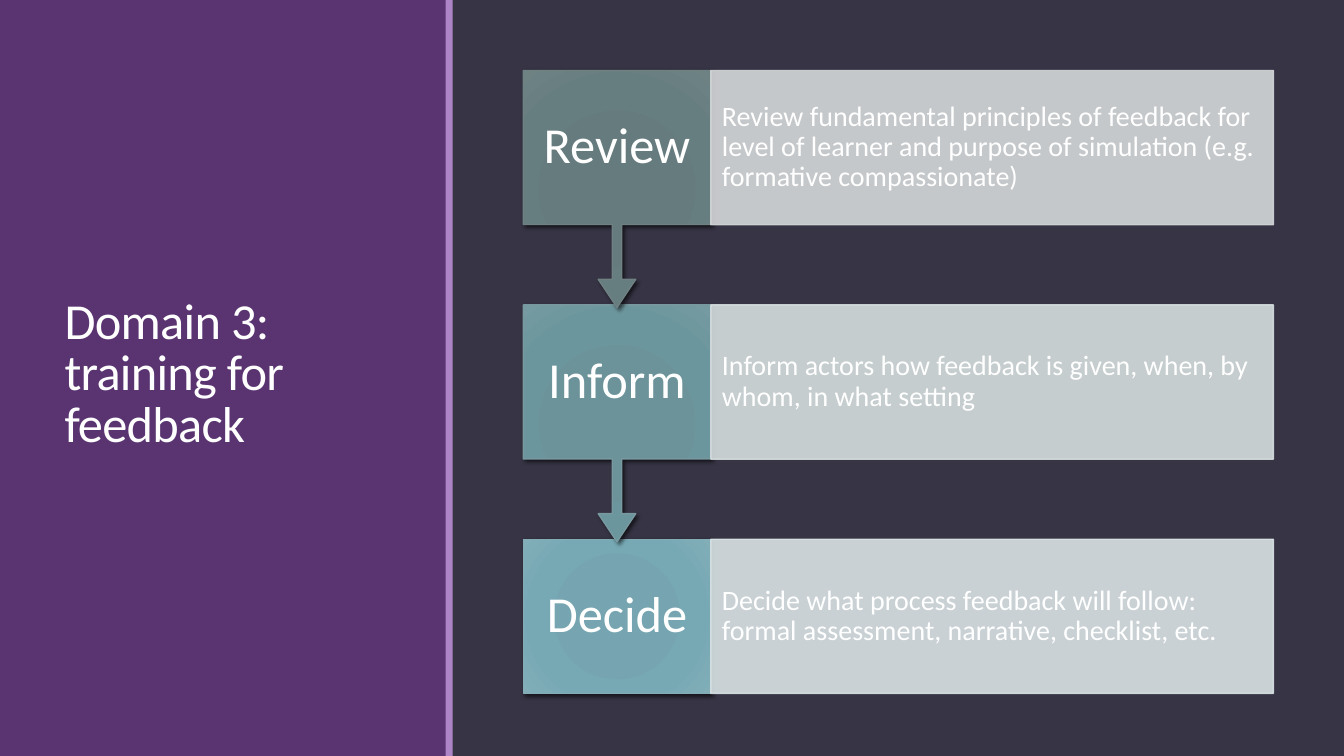
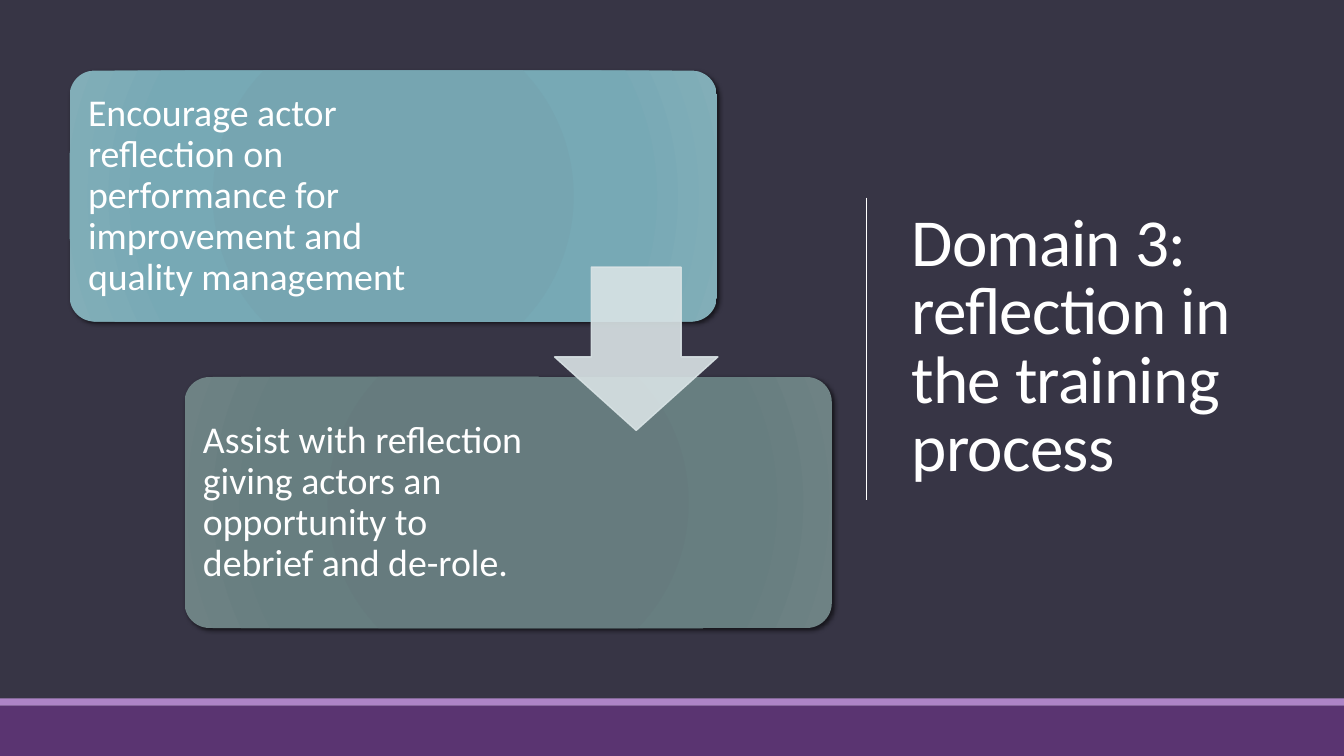
from dataclasses import dataclass
from typing import Any, Optional

import pptx
import pptx.dml.color
import pptx.enum.dml
import pptx.enum.shapes
import pptx.enum.text
import pptx.oxml
import pptx.oxml.ns
import pptx.util
from pptx.util import Inches

SHAPE = pptx.enum.shapes.MSO_SHAPE
ALIGN = pptx.enum.text.PP_ALIGN
qn = pptx.oxml.ns.qn
NAMESPACE = pptx.oxml.ns.nsdecls("a")


# Theme: colours, type sizes and the three tints of the diagrams
@dataclass(frozen=True)
class Tint:
    gradient: tuple[str, ...]
    edge: str
    pale: str


@dataclass(frozen=True)
class Theme:
    font: str = "Calibri"
    text: str = "FFFFFF"
    background: str = "373545"
    band: str = "5A3471"
    stripe: str = "AD84C6"
    side_title: int = 36
    large_title: int = 48
    label: int = 36
    detail: int = 20
    card: int = 27
    stops: tuple[int, ...] = (0, 34, 70, 100)
    grey: Tint = Tint(("657A7D", "667B7E", "677E80", "6E8284"), "6F8183", "D5D8D9")
    teal: Tint = Tint(("6A9299", "6C939A", "6C969D", "759AA1"), "77999F", "D6DEDF")
    blue: Tint = Tint(("74A4B1", "76A5B1", "77A9B5", "82AEB8"), "84ACB6", "D9E3E5")


THEME = Theme()


@dataclass(frozen=True)
class Frame:
    left: float
    top: float
    width: float
    height: float

    def lengths(self) -> tuple[int, ...]:
        return tuple(Inches(v) for v in (self.left, self.top, self.width, self.height))


@dataclass(frozen=True)
class Step:
    label: str
    detail: str
    tint: Tint


@dataclass(frozen=True)
class Card:
    text: str
    frame: Frame
    tint: Tint
    right_inset: float


STEPS = (
    Step("Review", "Review fundamental principles of feedback for level of learner and "
         "purpose of simulation (e.g. formative compassionate)", THEME.grey),
    Step("Inform", "Inform actors how feedback is given, when, by whom, in what setting",
         THEME.teal),
    Step("Decide", "Decide what process feedback will follow: formal assessment, "
         "narrative, checklist, etc.", THEME.blue),
)
CARDS = (
    Card("Encourage actor reflection on performance for improvement and quality management",
         Frame(0.69, 0.7, 6.42, 2.49), THEME.blue, 2.53),
    Card("Assist with reflection giving actors an opportunity to debrief and de-role.",
         Frame(1.83, 3.74, 6.42, 2.49), THEME.grey, 2.86),
)


# Formatting helpers
def rgb(value: str) -> pptx.dml.color.RGBColor:
    return pptx.dml.color.RGBColor.from_string(value)


def apply(target: Any, values: dict[str, Any]) -> None:
    for name, value in values.items():
        setattr(target, name, value)


def write(shape: Any, text: str, size: int, align: Any = ALIGN.LEFT, spacing: float = 0.9,
          insets: tuple[float, ...] = (0.1, 0.05, 0.1, 0.05)) -> Any:
    """Fill a shape with one paragraph and return its run."""
    box = shape.text_frame
    sides = ("margin_left", "margin_top", "margin_right", "margin_bottom")
    apply(box, {"word_wrap": True, "auto_size": pptx.enum.text.MSO_AUTO_SIZE.NONE,
                "vertical_anchor": pptx.enum.text.MSO_ANCHOR.MIDDLE})
    apply(box, {side: Inches(inset) for side, inset in zip(sides, insets)})
    para = box.paragraphs[0]
    apply(para, {"alignment": align, "line_spacing": spacing})
    span = para.add_run()
    span.text = text
    apply(span.font, {"name": THEME.font, "size": pptx.util.Pt(size)})
    span.font.color.rgb = rgb(THEME.text)
    return span


def add_block(page: Any, kind: Any, frame: Frame, fill: Optional[str] = None,
              edge: Optional[str] = None, adjust: tuple[float, ...] = ()) -> Any:
    shape = page.shapes.add_shape(kind, *frame.lengths())
    shape.shadow.inherit = False
    for index, value in enumerate(adjust):
        shape.adjustments[index] = value
    if fill:
        shape.fill.solid()
        shape.fill.fore_color.rgb = rgb(fill)
    if edge:
        shape.line.color.rgb = rgb(edge)
        shape.line.width = pptx.util.Pt(1)
    else:
        shape.line.fill.background()
    return shape


def add_pale(page: Any, kind: Any, frame: Frame, color: str,
             adjust: tuple[float, ...] = ()) -> Any:
    """Add a shape whose fill and line are 90 % opaque."""
    shape = add_block(page, kind, frame, color, color, adjust)
    for paint in shape.element.spPr.iter(qn("a:srgbClr")):
        paint.append(pptx.oxml.parse_xml(f'<a:alpha {NAMESPACE} val="90000"/>'))
    return shape


def add_glossy(page: Any, kind: Any, frame: Frame, tint: Tint, edge: Optional[str] = None,
               adjust: tuple[float, ...] = ()) -> Any:
    """Add a shape with a radial gradient and a soft shadow."""
    shape = add_block(page, kind, frame, edge=edge, adjust=adjust)
    shape.fill.gradient()
    gradient = shape.element.spPr.find(qn("a:gradFill"))
    for child in list(gradient):
        gradient.remove(child)
    stops = "".join(f'<a:gs pos="{stop * 1000}"><a:srgbClr val="{color}"/></a:gs>'
                    for stop, color in zip(THEME.stops, tint.gradient))
    gradient.append(pptx.oxml.parse_xml(f"<a:gsLst {NAMESPACE}>{stops}</a:gsLst>"))
    gradient.append(pptx.oxml.parse_xml(
        f'<a:path {NAMESPACE} path="circle">'
        '<a:fillToRect l="100000" t="100000" r="100000" b="100000"/></a:path>'))
    shape.element.spPr.find(qn("a:effectLst")).append(pptx.oxml.parse_xml(
        f'<a:outerShdw {NAMESPACE} blurRad="38100" dist="25400" dir="2700000" '
        'rotWithShape="0"><a:srgbClr val="000000"><a:alpha val="60000"/></a:srgbClr>'
        '</a:outerShdw>'))
    return shape


def add_title(page: Any, text: str, frame: Frame, size: int) -> None:
    title = page.shapes.title
    apply(title, dict(zip(("left", "top", "width", "height"), frame.lengths())))
    span = write(title, text, size, spacing=0.85)
    span._r.get_or_add_rPr().set("spc", "-50")


def add_bands(page: Any, band: Frame, stripe: Frame) -> None:
    for frame, color in ((band, THEME.band), (stripe, THEME.stripe)):
        add_block(page, SHAPE.RECTANGLE, frame, color)


def add_page(deck: Any) -> Any:
    return deck.slides.add_slide(deck.slide_layouts.get_by_name("Title Only"))


# Slide 1: side panel and three linked steps
def build_feedback(deck: Any) -> None:
    page = add_page(deck)
    add_bands(page, Frame(0, 0, 4.43, 7.5), Frame(4.42, 0, 0.07, 7.5))
    # The title moves in front of the panel
    page.shapes._spTree.append(page.shapes.title.element)
    add_title(page, "Domain 3: training for feedback", Frame(0.54, 0.57, 3.37, 6.31),
              THEME.side_title)

    left, top, pitch, label_width, height = 5.19, 0.7, 2.325, 1.86, 1.53
    # Drawn from the bottom so that each arrow tip overlaps the next step
    for index, step in reversed(list(enumerate(STEPS))):
        y = top + index * pitch
        if index == len(STEPS) - 1:
            label = add_glossy(page, SHAPE.RECTANGLE, Frame(left, y, label_width, height),
                               step.tint, step.tint.edge)
        else:
            label = add_glossy(page, SHAPE.DOWN_ARROW_CALLOUT,
                               Frame(left, y, label_width, 2.35), step.tint,
                               step.tint.edge, (0.05, 0.1, 0.15, 0.65))
        write(label, step.label, THEME.label, ALIGN.CENTER, insets=(0.13, 0.28, 0.13, 0.28))
        detail = add_pale(page, SHAPE.RECTANGLE,
                          Frame(left + label_width, y, 5.58, height), step.tint.pale)
        write(detail, step.detail, THEME.detail, insets=(0.11, 0.28, 0.11, 0.28))


# Slide 2: two cards joined by an arrow, title on the right
def build_reflection(deck: Any) -> None:
    page = add_page(deck)
    add_title(page, "Domain 3: reflection in the training process",
              Frame(8.94, 0.69, 3.69, 5.53), THEME.large_title)
    divider = page.shapes.add_connector(
        pptx.enum.shapes.MSO_CONNECTOR.STRAIGHT,
        Inches(8.59), Inches(1.96), Inches(8.59), Inches(4.96))
    divider.line.color.rgb = rgb(THEME.text)
    divider.line.width = pptx.util.Pt(0.5)
    divider.element.spPr.append(pptx.oxml.parse_xml(f"<a:effectLst {NAMESPACE}/>"))
    add_bands(page, Frame(0, 7, 13.33, 0.5), Frame(0, 6.93, 13.33, 0.07))

    for card in CARDS:
        shape = add_glossy(page, SHAPE.ROUNDED_RECTANGLE, card.frame, card.tint, adjust=(0.1,))
        write(shape, card.text, THEME.card, insets=(0.11, 0.11, card.right_inset, 0.11))
    add_pale(page, SHAPE.DOWN_ARROW, Frame(5.5, 2.65, 1.62, 1.62), THEME.blue.pale,
             (0.55, 0.45))


def main() -> None:
    deck = pptx.Presentation()
    apply(deck, {"slide_width": Inches(13.33), "slide_height": Inches(7.5)})
    backdrop = deck.slide_master.background.fill
    backdrop.solid()
    backdrop.fore_color.rgb = rgb(THEME.background)
    build_feedback(deck)
    build_reflection(deck)
    deck.save("out.pptx")


if __name__ == "__main__":
    main()
